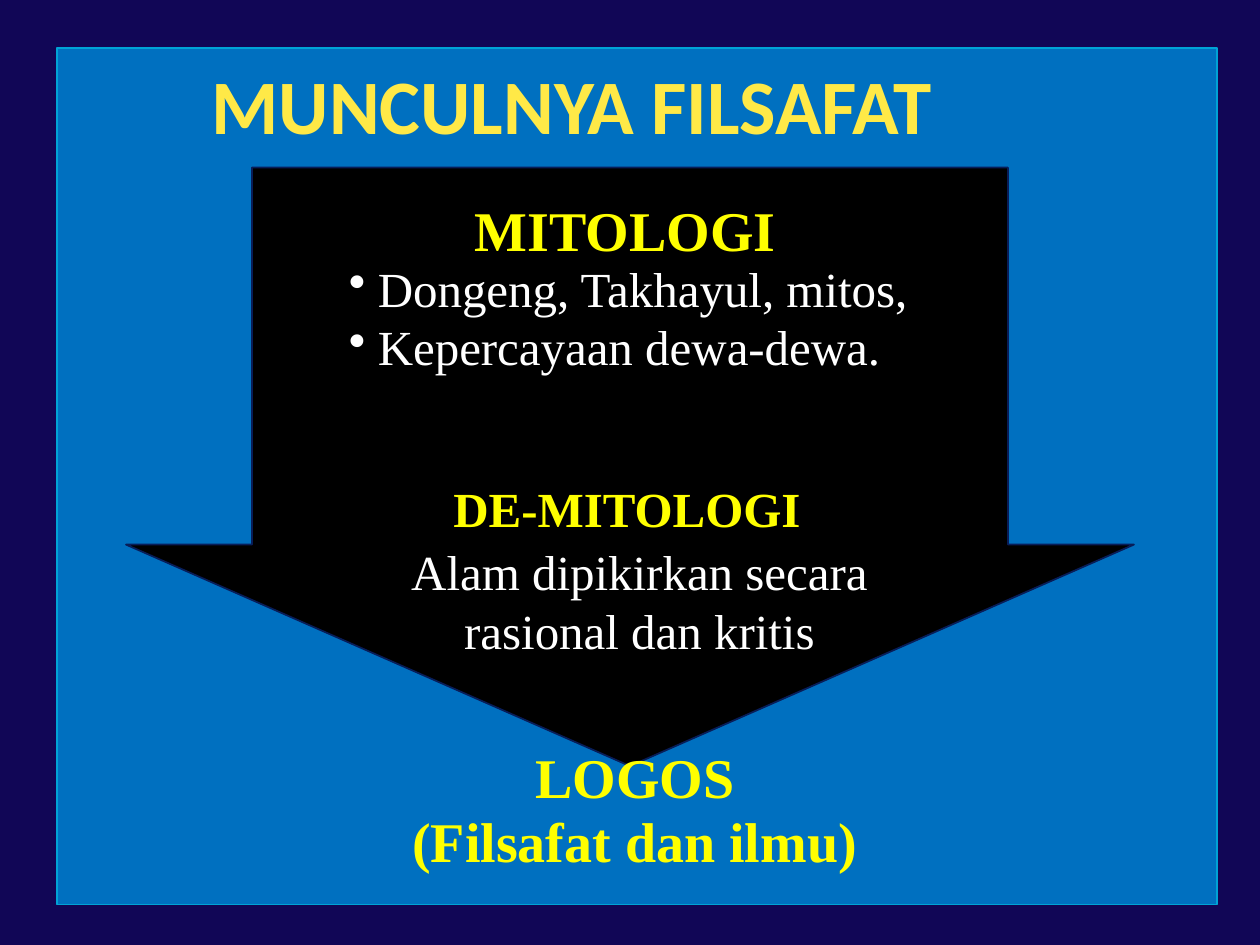
from lxml import etree
from pptx import Presentation
from pptx import util as u
from pptx.dml.color import RGBColor
from pptx.enum import shapes, text
from pptx.oxml.ns import qn

YELLOW, WHITE = "FFFF00", "FFFFFF"
LEFT, CENTER = text.PP_ALIGN.LEFT, text.PP_ALIGN.CENTER


def add_filled_shape(kind, box, fill, line):
    shape = slide.shapes.add_shape(kind, *map(u.Inches, box))
    shape.shadow.inherit = False
    shape.fill.solid()
    shape.fill.fore_color.rgb = RGBColor.from_string(fill)
    shape.line.color.rgb = RGBColor.from_string(line)
    shape.line.width = u.Pt(1)
    return shape


def write_text(shape, words, size, color, bold, align, font="Times New Roman"):
    frame = shape.text_frame
    frame.text = words
    frame.vertical_anchor = text.MSO_ANCHOR.TOP
    for paragraph in frame.paragraphs:
        paragraph.alignment = align
        for run in paragraph.runs:
            run.font.name = font
            run.font.size = u.Pt(size)
            run.font.bold = bold
            run.font.color.rgb = RGBColor.from_string(color)


presentation = Presentation()
presentation.slide_width, presentation.slide_height = u.Inches(10), u.Inches(7.5)
slide = presentation.slides.add_slide(presentation.slide_layouts[5])
slide.background.fill.solid()
slide.background.fill.fore_color.rgb = RGBColor.from_string("110656")

# Panel and arrow
add_filled_shape(shapes.MSO_SHAPE.RECTANGLE, (0.45, 0.38, 9.21, 6.8), "0070C0", "00A3D6")
arrow = add_filled_shape(shapes.MSO_SHAPE.DOWN_ARROW, (1, 1.33, 8, 4.75), "000000", "081D58")
arrow.adjustments[0] = 0.75
arrow.adjustments[1] = 0.37

# Title, brought in front of the panel
title = slide.shapes.title
title.left, title.top = u.Inches(1.58), u.Inches(0.41)
title.width, title.height = u.Inches(6.91), u.Inches(0.84)
write_text(title, "MUNCULNYA FILSAFAT", 44, "FFE947", True, LEFT, "Calibri")
title.text_frame.word_wrap = True
title.text_frame.auto_size = text.MSO_AUTO_SIZE.NONE
slide.shapes._spTree.append(title._element)

# Stages from myth to reason: box, words, size, colour, bold, alignment, wrap
stages = [
    ((3.67, 1.5, 2.61, 0.64), "MITOLOGI", 32, YELLOW, True, LEFT, False),
    ((2.67, 2, 5, 1.04), "Dongeng, Takhayul, mitos,\nKepercayaan dewa-dewa.",
     28, WHITE, False, LEFT, True),
    ((3.5, 3.75, 2.98, 0.57), "DE-MITOLOGI", 28, YELLOW, True, LEFT, False),
    ((2.58, 4.25, 4.99, 1.04), "Alam dipikirkan secara rasional dan kritis",
     28, WHITE, False, CENTER, True),
    ((3.16, 5.86, 3.76, 1.14), "LOGOS\n(Filsafat dan ilmu)", 32, YELLOW, True, CENTER, False),
]
boxes = []
for box, words, size, color, bold, align, wrap in stages:
    text_box = slide.shapes.add_textbox(*map(u.Inches, box))
    write_text(text_box, words, size, color, bold, align)
    text_box.text_frame.word_wrap = wrap
    text_box.text_frame.auto_size = text.MSO_AUTO_SIZE.SHAPE_TO_FIT_TEXT
    boxes.append(text_box)

myths, logos = boxes[1], boxes[-1]
for paragraph in myths.text_frame.paragraphs:
    properties = paragraph._p.get_or_add_pPr()
    properties.set("marL", str(u.Inches(0.23)))
    properties.set("indent", str(u.Inches(-0.23)))
    etree.SubElement(properties, qn("a:buChar")).set("char", "•")
for paragraph in logos.text_frame.paragraphs:
    paragraph.line_spacing = u.Pt(37)

presentation.save("out.pptx")
